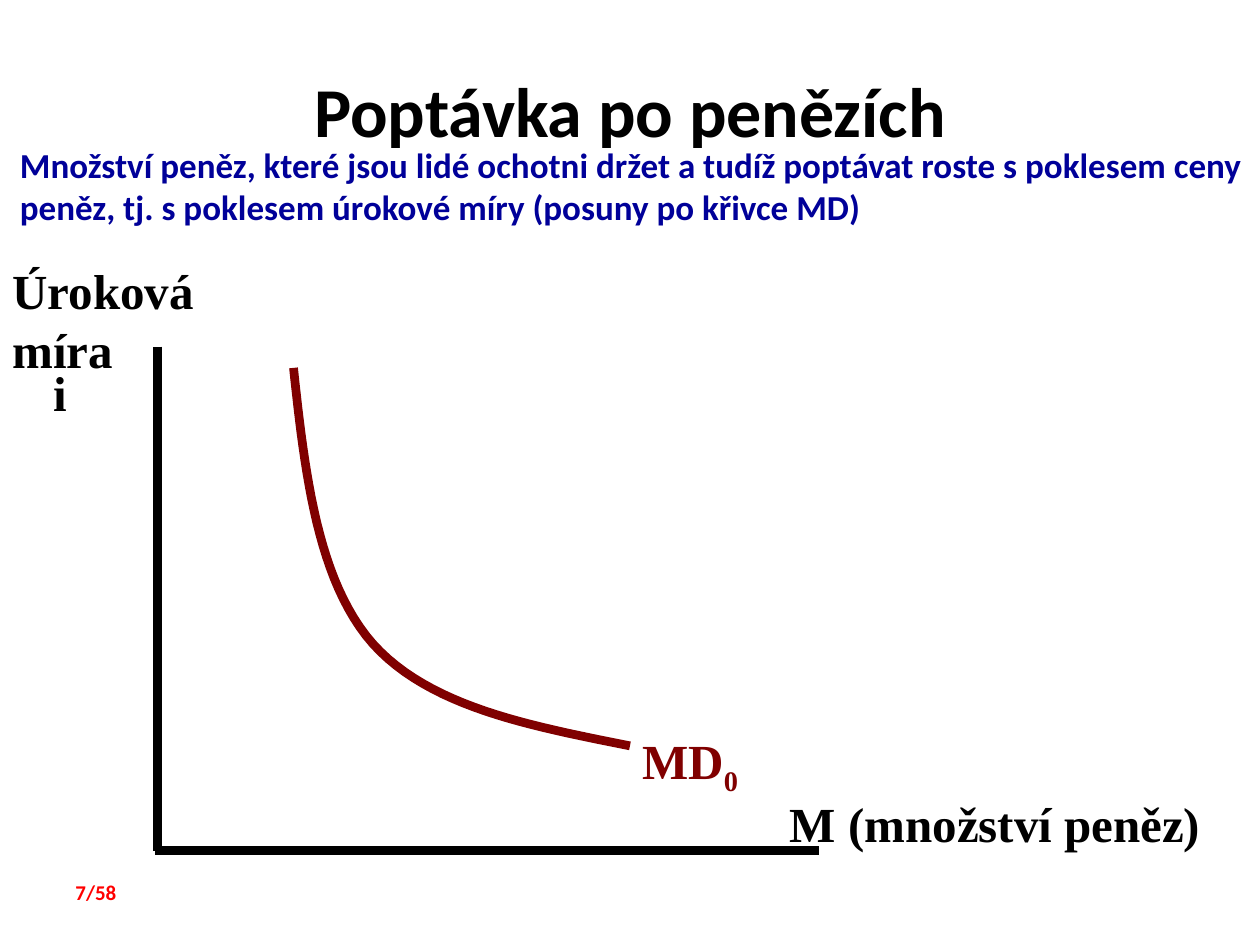
import pptx
import pptx.util
import pptx.dml.color
import pptx.enum.text
import pptx.enum.shapes
import pptx.oxml

Inches = pptx.util.Inches
Pt = pptx.util.Pt
ANCHOR = pptx.enum.text.MSO_ANCHOR
ALIGN = pptx.enum.text.PP_ALIGN
SERIF = "Times New Roman"
SANS = "Calibri"


def color(code):
    return pptx.dml.color.RGBColor.from_string(code)


def label(slide, box, text, size, face, code):
    shape = slide.shapes.add_textbox(*[Inches(v) for v in box])
    frame = shape.text_frame
    frame.word_wrap = True
    frame.text = text
    for run in frame.paragraphs[0].runs:
        run.font.size = Pt(size)
        run.font.name = face
        run.font.bold = True
        run.font.color.rgb = color(code)
    return frame


deck = pptx.Presentation()
deck.slide_width = Inches(10)
deck.slide_height = Inches(7.5)
slide = deck.slides.add_slide(deck.slide_layouts[6])

# Title and statement
title = label(slide, (0.5, 0.3, 9, 1.14), "Poptávka po penězích", 40, SANS, "000000")
title.vertical_anchor = ANCHOR.MIDDLE
title.paragraphs[0].alignment = ALIGN.CENTER
label(slide, (0.06, 1.09, 10, 0.77),
      "Množství peněz, které jsou lidé ochotni držet a tudíž poptávat roste "
      "s poklesem ceny peněz, tj. s poklesem úrokové míry (posuny po křivce MD)",
      20, SANS, "000099")

# Axes
for x1, y1, x2, y2, width in [(1.25, 2.75, 1.25, 6.75, 5.5),
                              (1.23, 6.75, 6.5, 6.75, 5)]:
    axis = slide.shapes.add_connector(
        pptx.enum.shapes.MSO_CONNECTOR.STRAIGHT,
        Inches(x1), Inches(y1), Inches(x2), Inches(y2))
    axis.line.color.rgb = color("000000")
    axis.line.width = Pt(width)
    props = axis.element.spPr
    props.append(pptx.oxml.parse_xml(
        '<a:effectLst xmlns:a="http://schemas.openxmlformats.org/drawingml/2006/main"/>'))

# Demand curve: two joined cubic arcs, sampled in even steps
arcs = [[(2.33, 2.92), (2.42, 3.76), (2.52, 4.61), (2.96, 5.11)],
        [(2.96, 5.11), (3.41, 5.61), (4.2, 5.76), (5, 5.92)]]
steps = 24
dots = []
for arc in arcs:
    for step in range(1, steps + 1):
        t = step / steps
        parts = [(1 - t) ** 3, 3 * t * (1 - t) ** 2, 3 * t ** 2 * (1 - t), t ** 3]
        dots.append([Inches(sum(w * dot[i] for w, dot in zip(parts, arc)))
                     for i in (0, 1)])
start = arcs[0][0]
path = slide.shapes.build_freeform(Inches(start[0]), Inches(start[1]))
path.add_line_segments(dots, close=False)
curve = path.convert_to_shape()
curve.shadow.inherit = False
curve.fill.background()
curve.line.color.rgb = color("800000")
curve.line.width = Pt(5)

# Axis and curve labels
for box, text in [((0, 2.02, 2.25, 1.03), "Úroková míra"),
                  ((0.33, 2.83, 0.67, 0.57), "i"),
                  ((6.17, 6.25, 3.58, 0.57), "M (množství peněz)")]:
    label(slide, box, text, 28, SERIF, "000000")

name = label(slide, (5, 5.75, 1.17, 0.57), "MD", 28, SERIF, "800000")
sub = name.paragraphs[0].add_run()
sub.text = "0"
sub.font.size = Pt(28)
sub.font.name = SERIF
sub.font.bold = True
sub.font.color.rgb = color("800000")
sub.font._element.set("baseline", "-25000")

# Page number
label(slide, (0.5, 6.93, 0.92, 0.3), "7/58", 12, SANS, "FF0000")

deck.save("out.pptx")
